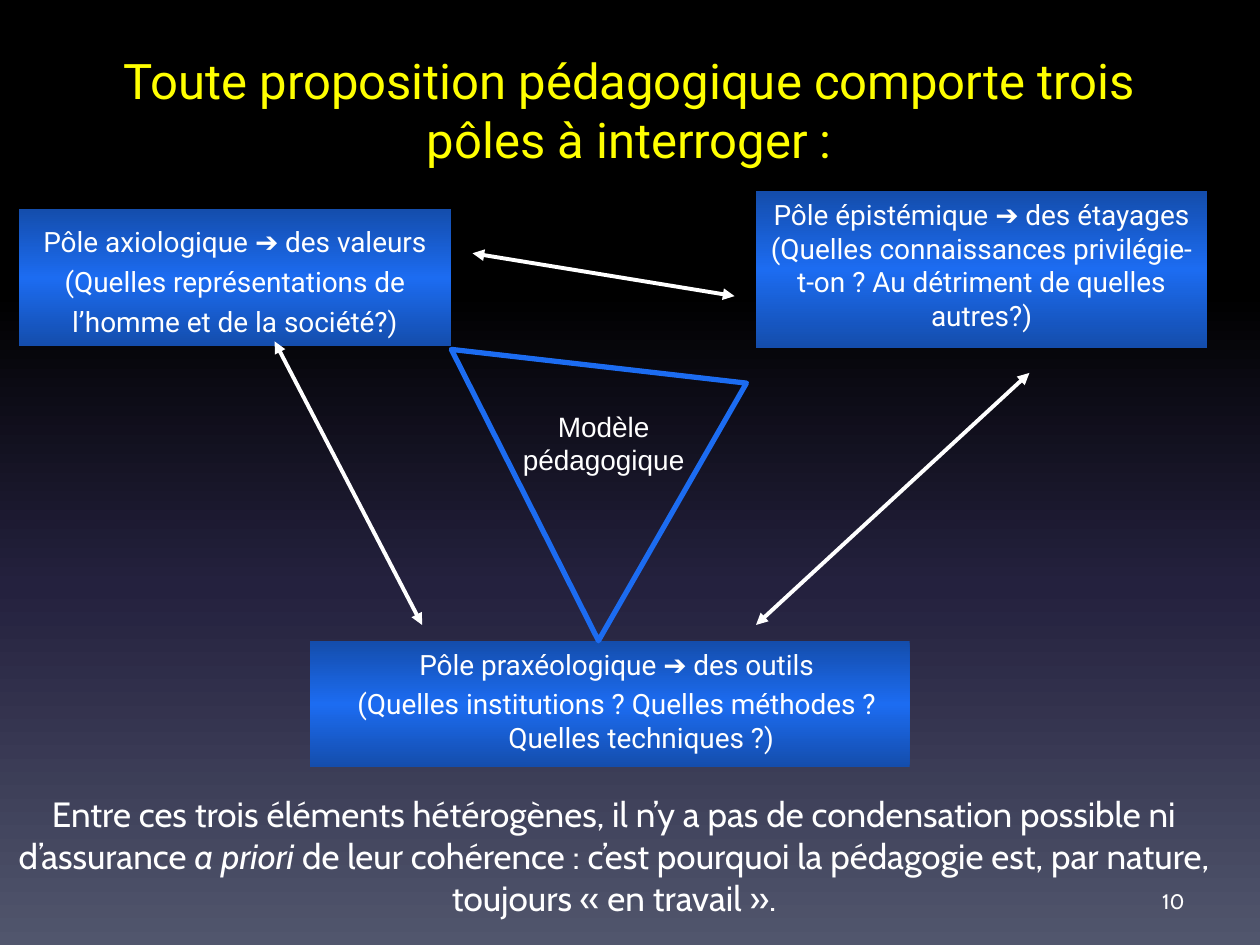
from copy import deepcopy

from lxml import etree
from pptx import Presentation
from pptx.dml.color import RGBColor
from pptx.enum.shapes import MSO_CONNECTOR, MSO_SHAPE
from pptx.enum.text import MSO_ANCHOR, PP_ALIGN
from pptx.oxml.ns import qn
from pptx.util import Inches, Pt

CENTER, RIGHT = PP_ALIGN.CENTER, PP_ALIGN.RIGHT
TOP, MIDDLE = MSO_ANCHOR.TOP, MSO_ANCHOR.MIDDLE
RECTANGLE, TRIANGLE = MSO_SHAPE.RECTANGLE, MSO_SHAPE.ISOSCELES_TRIANGLE
STRAIGHT = MSO_CONNECTOR.STRAIGHT
WHITE, YELLOW, BLUE, DARK_BLUE = "FFFFFF", "FFFF00", "1C6CF1", "144DAC"
color = RGBColor.from_string


def set_gradient(fill, element, stops):
    fill.gradient()
    fill.gradient_angle = 270
    stop_list = next(element.iter(qn("a:gsLst")))
    for _ in stops[2:]:
        stop_list.append(deepcopy(stop_list[0]))
    for stop, (position, value) in zip(fill.gradient_stops, stops):
        stop.position = position
        stop.color.rgb = color(value)


def write_text(shape, paragraphs, size, font, value=WHITE, align=CENTER, anchor=TOP):
    frame = shape.text_frame
    frame.word_wrap = True
    frame.vertical_anchor = anchor
    for index, runs in enumerate(paragraphs):
        paragraph = frame.add_paragraph() if index else frame.paragraphs[0]
        paragraph.alignment = align
        for text, italic in runs:
            run = paragraph.add_run()
            run.text = text
            run.font.size = Pt(size)
            run.font.name = font
            run.font.italic = italic
            run.font.color.rgb = color(value)
    return frame


presentation = Presentation()
presentation.slide_width = Inches(10)
presentation.slide_height = Inches(7.5)
slide = presentation.slides.add_slide(presentation.slide_layouts[5])
set_gradient(slide.background.fill, slide.element,
             [(0, "000000"), (0.31, "000000"), (0.62, "24213E"), (1, "51566D")])

title = slide.shapes.title
title.left, title.top = Inches(0.62), Inches(0.37)
title.width, title.height = Inches(8.75), Inches(1)
write_text(title, [[("Toute proposition pédagogique comporte trois pôles à interroger :", False)]],
           28, "Roboto", YELLOW, anchor=MIDDLE)

poles = [
    ((0.15, 1.66, 3.43, 1.09), MIDDLE, 1.2, 0, 0, 0,
     ["Pôle axiologique ➔ des valeurs",
      "(Quelles représentations de l’homme et de la société?)"]),
    ((2.46, 5.09, 4.76, 1), TOP, 1, 3.2, 0.5, -0.39,
     ["Pôle praxéologique ➔ des outils",
      "(Quelles institutions ? Quelles méthodes ? Quelles techniques ?)"]),
    ((6, 1.52, 3.58, 1.24), TOP, 1, 0, 0, 0,
     ["Pôle épistémique ➔ des étayages",
      "(Quelles connaissances privilégie-t-on ? Au détriment de quelles autres?)"]),
]
for box, anchor, line_spacing, space_before, margin, indent, lines in poles:
    pole = slide.shapes.add_shape(RECTANGLE, *map(Inches, box))
    pole.shadow.inherit = False
    pole.line.fill.background()
    set_gradient(pole.fill, pole.element, [(0, DARK_BLUE), (0.5, BLUE), (1, DARK_BLUE)])
    frame = write_text(pole, [[(line, False)] for line in lines], 16, "Roboto", anchor=anchor)
    for paragraph in frame.paragraphs:
        paragraph.line_spacing = line_spacing
        paragraph.space_before = Pt(space_before)
        properties = paragraph._p.get_or_add_pPr()
        properties.set("marL", str(Inches(margin)))
        properties.set("indent", str(Inches(indent)))

for ends in [(2.18, 2.71, 3.35, 4.96), (3.75, 2.01, 5.83, 2.35), (8.17, 2.96, 6, 4.96)]:
    arrow = slide.shapes.add_connector(STRAIGHT, *map(Inches, ends))
    arrow.line.color.rgb = color(WHITE)
    arrow.line.width = Pt(2.25)
    for tag in ("a:headEnd", "a:tailEnd"):
        etree.SubElement(arrow.line._get_or_add_ln(), qn(tag), type="triangle")
    etree.SubElement(arrow.element.spPr, qn("a:effectLst"))

triangle = slide.shapes.add_shape(TRIANGLE, *map(Inches, (3.75, 2.5, 2.59, 1.97)))
triangle.rotation = 63.2
triangle.shadow.inherit = False
triangle.fill.background()
triangle.line.color.rgb = color(BLUE)
triangle.line.width = Pt(3)

conclusion = [
    ("Entre ces trois éléments hétérogènes, il n’y a pas de condensation possible "
     "ni d’assurance ", False),
    ("a priori ", True),
    ("de leur cohérence : c’est pourquoi la pédagogie est, par nature, "
     "toujours « en travail ».", False),
]
texts = [
    ((4, 3.2, 1.58, 0.64), [("Modèle pédagogique", False)], 16, "Arial", CENTER, TOP),
    ((0, 6.24, 9.75, 1.11), conclusion, 20, "Cabin", CENTER, TOP),
    ((7.17, 6.95, 2.33, 0.4), [("10", False)], 12, "Cabin", RIGHT, MIDDLE),
]
for box, runs, size, font, align, anchor in texts:
    text_box = slide.shapes.add_textbox(*map(Inches, box))
    write_text(text_box, [runs], size, font, align=align, anchor=anchor)

presentation.save("out.pptx")
